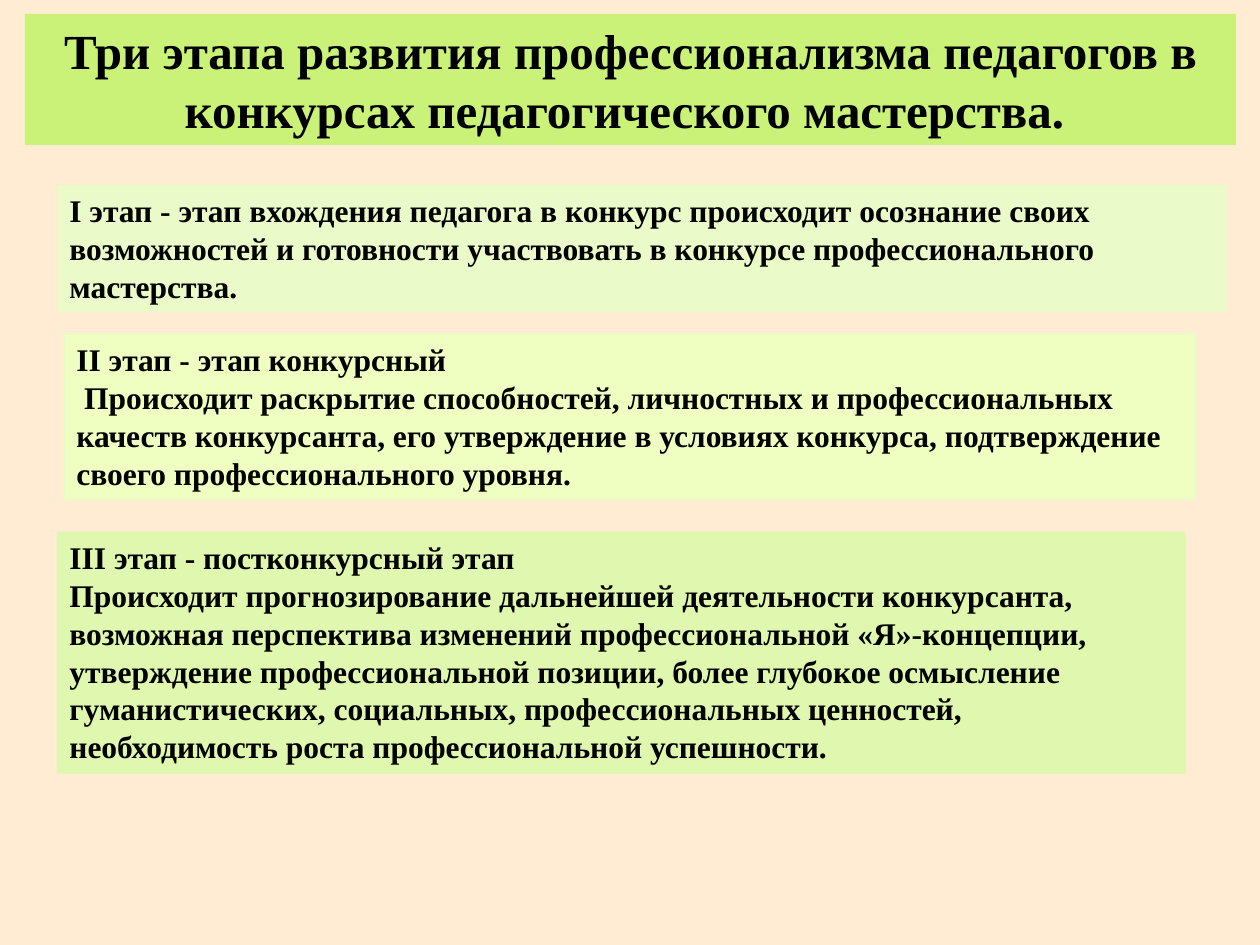
from pptx import Presentation
from pptx import util as u
from pptx.dml import color
from pptx.enum import shapes, text

SCALE = u.Inches(1) / 126


def rgb(value):
    return color.RGBColor.from_string(value)


def add_panel(paragraphs, box, fill, size=18, align=text.PP_ALIGN.LEFT, line=None):
    shape = slide.shapes.add_shape(
        shapes.MSO_SHAPE.RECTANGLE, *(round(length * SCALE) for length in box))
    shape.shadow.inherit = False
    shape.fill.solid()
    shape.fill.fore_color.rgb = rgb(fill)
    if line:
        shape.line.color.rgb = rgb(line)
        shape.line.width = u.Pt(0.75)
    else:
        shape.line.fill.background()
    frame = shape.text_frame
    frame.word_wrap = True
    frame.auto_size = text.MSO_AUTO_SIZE.SHAPE_TO_FIT_TEXT
    frame.vertical_anchor = text.MSO_ANCHOR.TOP
    frame.text = "\n".join(paragraphs)
    for paragraph in frame.paragraphs:
        paragraph.alignment = align
        font = paragraph.runs[0].font
        font.name = "Times New Roman"
        font.size = u.Pt(size)
        font.bold = True
        font.color.rgb = rgb("000000")


presentation = Presentation()
presentation.slide_width = u.Inches(10)
presentation.slide_height = u.Inches(7.5)
slide = presentation.slides.add_slide(presentation.slide_layouts[6])
slide.background.fill.solid()
slide.background.fill.fore_color.rgb = rgb("FFECD3")

add_panel(
    ["I этап - этап вхождения педагога в конкурс происходит осознание своих "
     "возможностей и готовности участвовать в конкурсе профессионального мастерства."],
    (57, 185, 1170, 127), "EAFAC9")
add_panel(
    ["II этап - этап конкурсный",
     " Происходит раскрытие способностей, личностных и профессиональных качеств "
     "конкурсанта, его утверждение в условиях конкурса, подтверждение своего "
     "профессионального уровня."],
    (64, 334, 1131, 165), "EFFFC1", line="EAFAC9")
add_panel(
    ["Три этапа развития профессионализма педагогов в конкурсах "
     "педагогического мастерства. "],
    (25, 14, 1211, 131), "CAF278", size=28, align=text.PP_ALIGN.CENTER)
add_panel(
    ["III этап - постконкурсный этап",
     "Происходит прогнозирование дальнейшей деятельности конкурсанта, возможная "
     "перспектива изменений профессиональной «Я»-концепции, утверждение "
     "профессиональной позиции, более глубокое осмысление гуманистических, "
     "социальных, профессиональных ценностей, необходимость роста "
     "профессиональной успешности."],
    (57, 532, 1129, 242), "DFF7AE")

presentation.save("out.pptx")
